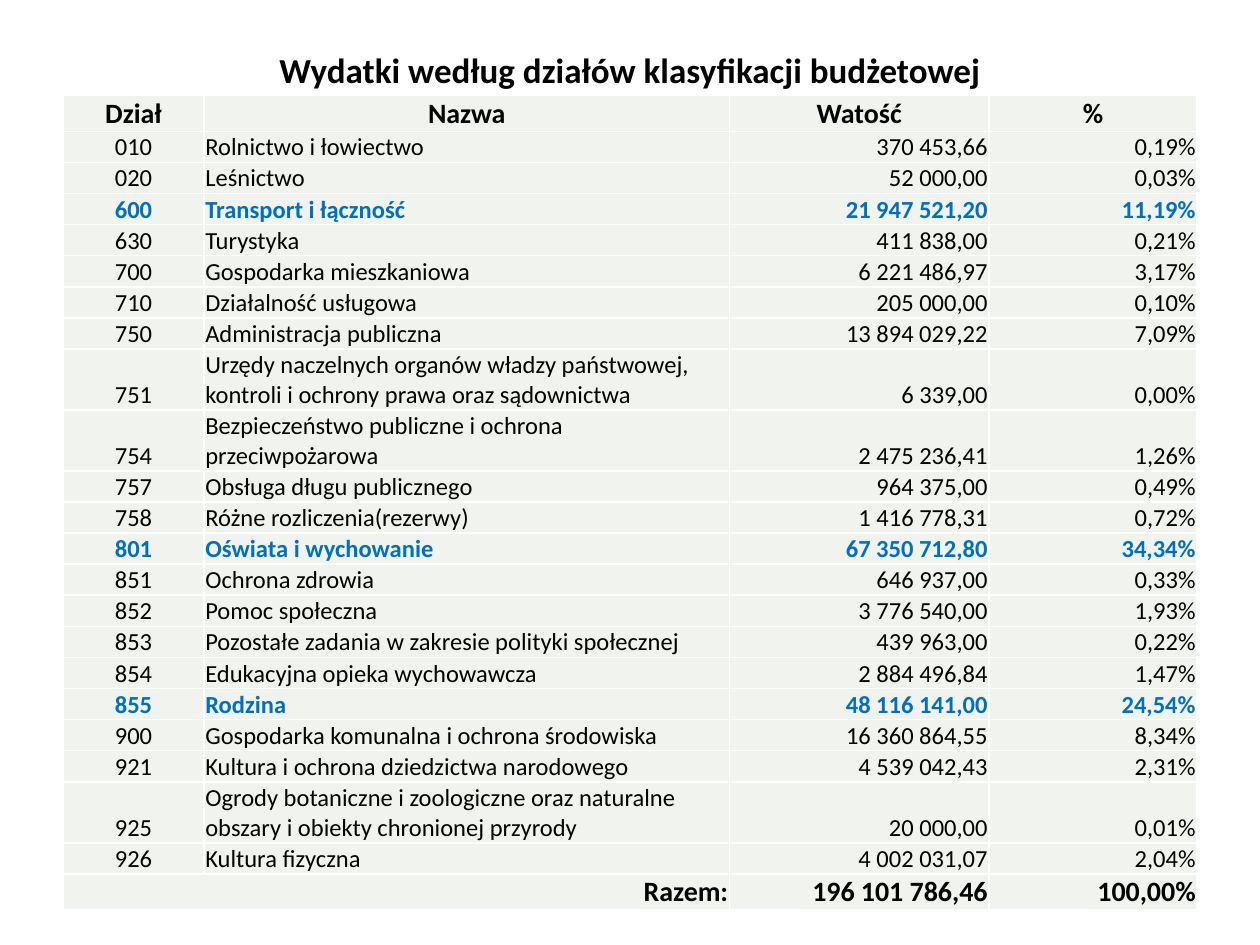
"""Build the slide on budget spending by classification division."""
from lxml import etree
from pptx import Presentation
from pptx.dml.color import RGBColor
from pptx.enum.text import MSO_ANCHOR, PP_ALIGN
from pptx.oxml.ns import qn
from pptx.util import Emu, Inches, Pt

LEFT, CENTER, RIGHT = PP_ALIGN.LEFT, PP_ALIGN.CENTER, PP_ALIGN.RIGHT
MIDDLE, BOTTOM = MSO_ANCHOR.MIDDLE, MSO_ANCHOR.BOTTOM
TITLE_ONLY = 5
GRID_COLUMNS, GRID_ROWS = 100, 75
COLORS = {"text": "000000", "highlight": "0070C0", "cell": "F0F3EE", "border": "FFFFFF"}

HEADINGS = ("Dział", "Nazwa", "Watość", "%")
ALIGNMENTS = (CENTER, LEFT, RIGHT, RIGHT)
COLUMN_WIDTHS = (11.2, 41.7, 20.6, 16.5)
EDGE_ROW, ONE_LINE, TWO_LINES = 2.7, 2.4, 4.7
LARGEST = {"600", "801", "855"}
LONG_NAMES = {"751", "754", "925"}
DIVISIONS = (
    ("010", "Rolnictwo i łowiectwo", "370 453,66", "0,19%"),
    ("020", "Leśnictwo", "52 000,00", "0,03%"),
    ("600", "Transport i łączność", "21 947 521,20", "11,19%"),
    ("630", "Turystyka", "411 838,00", "0,21%"),
    ("700", "Gospodarka mieszkaniowa", "6 221 486,97", "3,17%"),
    ("710", "Działalność usługowa", "205 000,00", "0,10%"),
    ("750", "Administracja publiczna", "13 894 029,22", "7,09%"),
    ("751", "Urzędy naczelnych organów władzy państwowej, kontroli i ochrony prawa "
            "oraz sądownictwa", "6 339,00", "0,00%"),
    ("754", "Bezpieczeństwo publiczne i ochrona przeciwpożarowa", "2 475 236,41", "1,26%"),
    ("757", "Obsługa długu publicznego", "964 375,00", "0,49%"),
    ("758", "Różne rozliczenia(rezerwy)", "1 416 778,31", "0,72%"),
    ("801", "Oświata i wychowanie", "67 350 712,80", "34,34%"),
    ("851", "Ochrona zdrowia", "646 937,00", "0,33%"),
    ("852", "Pomoc społeczna", "3 776 540,00", "1,93%"),
    ("853", "Pozostałe zadania w zakresie polityki społecznej", "439 963,00", "0,22%"),
    ("854", "Edukacyjna opieka wychowawcza", "2 884 496,84", "1,47%"),
    ("855", "Rodzina", "48 116 141,00", "24,54%"),
    ("900", "Gospodarka komunalna i ochrona środowiska", "16 360 864,55", "8,34%"),
    ("921", "Kultura i ochrona dziedzictwa narodowego", "4 539 042,43", "2,31%"),
    ("925", "Ogrody botaniczne i zoologiczne oraz naturalne obszary i obiekty "
            "chronionej przyrody", "20 000,00", "0,01%"),
    ("926", "Kultura fizyczna", "4 002 031,07", "2,04%"),
)
TOTAL = ("Razem:", "", "196 101 786,46", "100,00%")


def write(frame, text, size=14, bold=False, color="text", align=LEFT, font="Calibri"):
    paragraph = frame.paragraphs[0]
    paragraph.alignment = align
    if not text:
        return
    run = paragraph.add_run()
    run.text = text
    run.font.name = font
    run.font.size = Pt(size)
    run.font.bold = bold
    run.font.color.rgb = RGBColor.from_string(COLORS[color])


class BudgetSlide:
    def __init__(self, deck):
        self.column = deck.slide_width / GRID_COLUMNS
        self.row = deck.slide_height / GRID_ROWS
        self.slide = deck.slides.add_slide(deck.slide_layouts[TITLE_ONLY])

    def across(self, columns):
        return Emu(round(columns * self.column))

    def down(self, rows):
        return Emu(round(rows * self.row))

    def title(self, text, left, top, width, height):
        heading = self.slide.shapes.title
        heading.left, heading.top = self.across(left), self.down(top)
        heading.width, heading.height = self.across(width), self.down(height)
        heading.text_frame.vertical_anchor = MIDDLE
        write(heading.text_frame, text, size=20, bold=True, align=CENTER)

    def table(self, left, top, widths, heights):
        frame = self.slide.shapes.add_table(
            len(heights), len(widths), self.across(left), self.down(top),
            self.across(sum(widths)), self.down(sum(heights)))
        grid = frame.table
        grid.horz_banding = False
        for column, width in zip(grid.columns, widths):
            column.width = self.across(width)
        for row, height in zip(grid.rows, heights):
            row.height = self.down(height)
        return grid

    def fill_row(self, row, texts, alignments, **text_format):
        for cell, text, align in zip(row.cells, texts, alignments):
            self.style_cell(cell)
            write(cell.text_frame, text, align=align, **text_format)

    def style_cell(self, cell):
        cell.margin_left = cell.margin_right = cell.margin_top = Inches(0.01)
        cell.margin_bottom = 0
        cell.vertical_anchor = BOTTOM
        properties = cell._tc.get_or_add_tcPr()
        for side in ("lnL", "lnR", "lnT", "lnB"):
            border = etree.SubElement(properties, qn(f"a:{side}"), w=str(Pt(1)))
            paint = etree.SubElement(border, qn("a:solidFill"))
            etree.SubElement(paint, qn("a:srgbClr"), val=COLORS["border"])
        cell.fill.solid()
        cell.fill.fore_color.rgb = RGBColor.from_string(COLORS["cell"])


def main():
    deck = Presentation()
    deck.slide_width, deck.slide_height = Inches(10), Inches(7.5)
    budget = BudgetSlide(deck)
    budget.title("Wydatki według działów klasyfikacji budżetowej", 5, 3, 90, 5)

    heights = [TWO_LINES if code in LONG_NAMES else ONE_LINE for code, *_ in DIVISIONS]
    spending = budget.table(5, 7.6, COLUMN_WIDTHS, [EDGE_ROW, *heights, EDGE_ROW])
    header, *division_rows, total = spending.rows
    budget.fill_row(header, HEADINGS, [CENTER] * len(HEADINGS), size=16, bold=True)
    for row, division in zip(division_rows, DIVISIONS):
        largest = division[0] in LARGEST
        budget.fill_row(row, division, ALIGNMENTS, bold=largest,
                        color="highlight" if largest else "text")
    budget.fill_row(total, TOTAL, [RIGHT] * len(TOTAL), size=16, bold=True)
    total_label, total_name, *_ = total.cells
    total_label.merge(total_name)
    deck.save("out.pptx")


if __name__ == "__main__":
    main()
